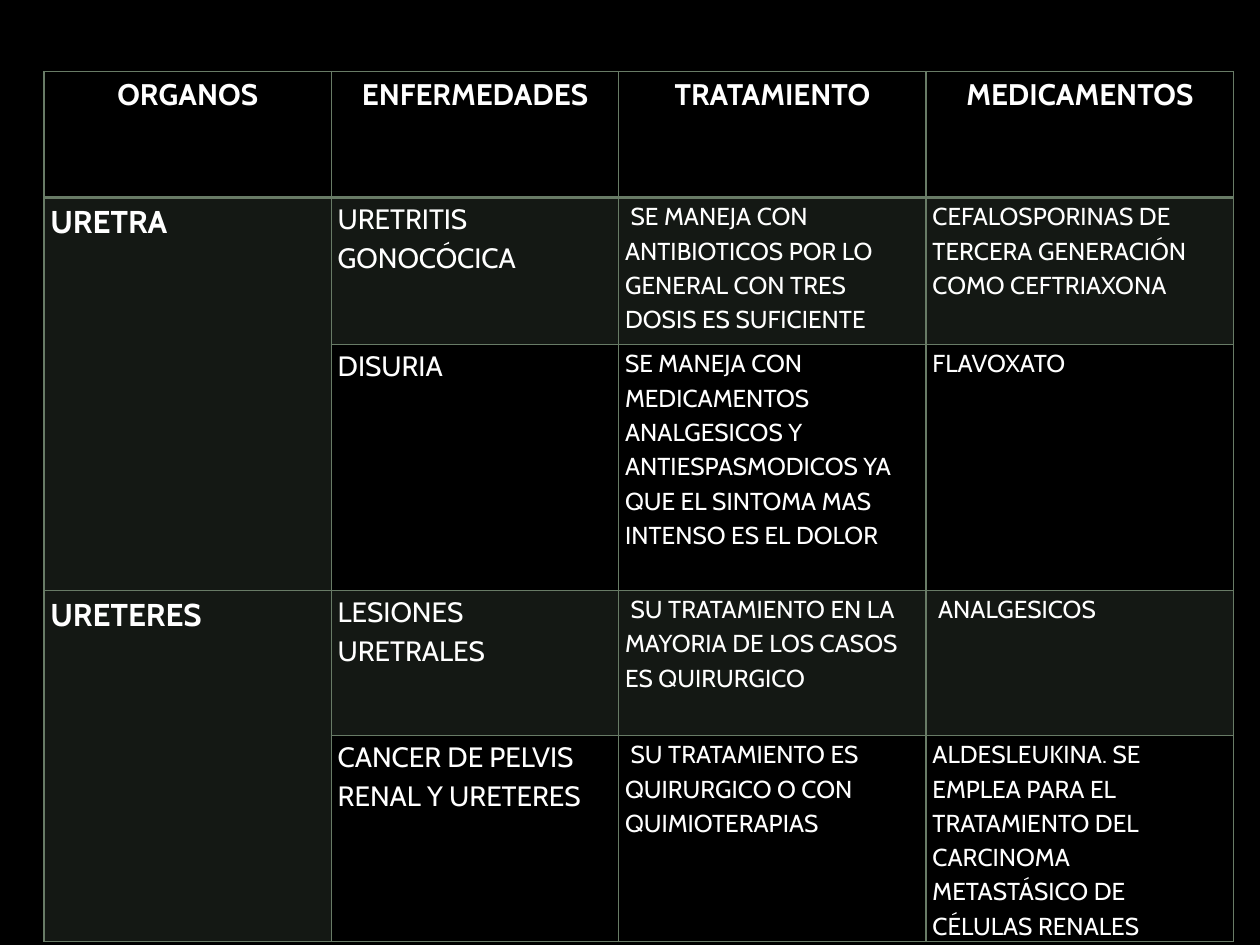
from lxml.etree import SubElement
from pptx import Presentation
from pptx.dml.color import RGBColor
from pptx.enum.text import PP_ALIGN
from pptx.oxml import parse_xml
from pptx.oxml.ns import nsdecls, qn
from pptx.util import Pt

CENTER, LEFT = PP_ALIGN.CENTER, PP_ALIGN.LEFT
BLACK, WHITE, GREEN = "000000", "FFFFFF", "687B66"
WIDTHS = [164.2, 164.2, 175.7, 175.7]
HEIGHTS = [72, 84, 140.4, 83, 111]
SIZES = [18, 16, 14, 14]
HEAD_SIZE = 17
SPANS = [(1, 2), (3, 4)]
ROWS = [
    ["ORGANOS", "ENFERMEDADES", "TRATAMIENTO", "MEDICAMENTOS"],
    ["URETRA", "URETRITIS GONOCÓCICA",
     " SE MANEJA CON ANTIBIOTICOS POR LO GENERAL CON TRES DOSIS ES SUFICIENTE",
     "CEFALOSPORINAS DE TERCERA GENERACIÓN COMO CEFTRIAXONA"],
    ["", "DISURIA",
     "SE MANEJA CON MEDICAMENTOS ANALGESICOS Y ANTIESPASMODICOS YA QUE EL "
     "SINTOMA MAS INTENSO ES EL DOLOR",
     "FLAVOXATO"],
    ["URETERES", "LESIONES URETRALES",
     " SU TRATAMIENTO EN LA MAYORIA DE LOS CASOS ES QUIRURGICO",
     " ANALGESICOS"],
    ["", "CANCER DE PELVIS RENAL Y URETERES",
     " SU TRATAMIENTO ES QUIRURGICO O CON QUIMIOTERAPIAS",
     "ALDESLEUKINA. SE EMPLEA PARA EL TRATAMIENTO DEL CARCINOMA "
     "METASTÁSICO DE CÉLULAS RENALES"],
]


def color(code):
    return RGBColor.from_string(code)


def paint(cell, tint):
    if not tint:
        cell.fill.background()
        return
    cell.fill.solid()
    cell.fill.fore_color.rgb = color(GREEN)
    tone = cell._tc.tcPr.find(".//" + qn("a:srgbClr"))
    SubElement(tone, qn("a:alpha"), val="20000")


def frame(cell, row):
    wide = {"T": 2 if row == 1 else 1, "B": 2 if row == 0 else 1}
    for spot, side in enumerate("LRTB"):
        line = parse_xml(
            f'<a:ln{side} {nsdecls("a")} w="{Pt(wide.get(side, 1))}">'
            f'<a:solidFill><a:srgbClr val="{GREEN}"/></a:solidFill></a:ln{side}>')
        cell._tc.get_or_add_tcPr().insert(spot, line)


def write(cell, text, row, col):
    cell.margin_left = cell.margin_right = Pt(3.6)
    cell.margin_top = cell.margin_bottom = 0
    cell.text = text
    para = cell.text_frame.paragraphs[0]
    para.alignment = CENTER if row == 0 else LEFT
    para.line_spacing = 1.15
    font = para.font
    font.name = "Cabin"
    font.size = Pt(SIZES[col] if row else HEAD_SIZE)
    font.bold = row == 0 or col == 0
    font.color.rgb = color(WHITE)


def main():
    """Build the slide of urinary tract diseases and their treatment."""
    deck = Presentation()
    deck.slide_width, deck.slide_height = Pt(720), Pt(540)
    slide = deck.slides.add_slide(deck.slide_layouts[6])
    back = slide.background.fill
    back.solid()
    back.fore_color.rgb = color(BLACK)

    table = slide.shapes.add_table(
        len(ROWS), len(WIDTHS), Pt(25.2), Pt(41),
        Pt(sum(WIDTHS)), Pt(sum(HEIGHTS))).table
    table.horz_banding = False
    for column, width in zip(table.columns, WIDTHS):
        column.width = Pt(width)
    for line, height in zip(table.rows, HEIGHTS):
        line.height = Pt(height)
    for row, texts in enumerate(ROWS):
        for col, text in enumerate(texts):
            cell = table.cell(row, col)
            write(cell, text, row, col)
            paint(cell, row % 2 or (row and col == 0))
            frame(cell, row)
    for first, last in SPANS:
        table.cell(first, 0).merge(table.cell(last, 0))

    deck.save("out.pptx")


if __name__ == "__main__":
    main()
